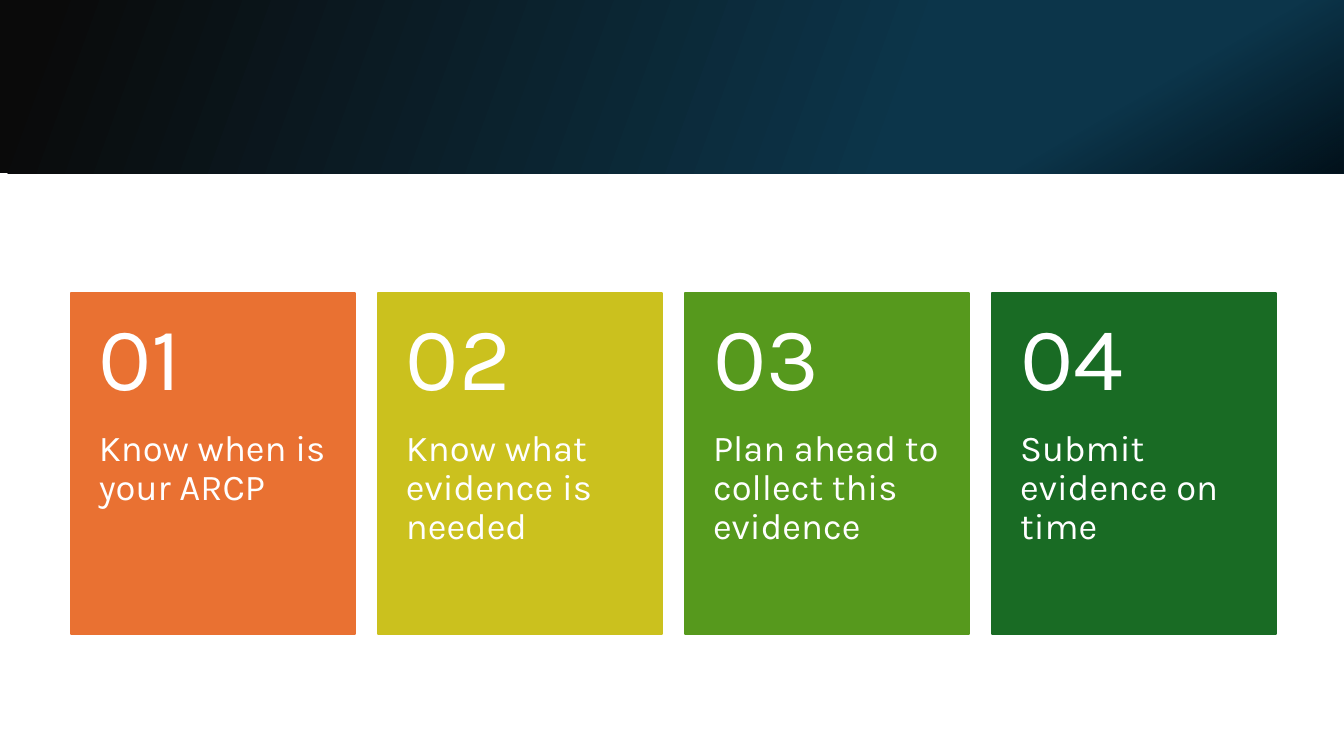
from lxml import etree
from pptx import Presentation, util as u
from pptx.dml.color import RGBColor
from pptx.enum import shapes, text
from pptx.oxml.ns import qn

COLOURS = {
    "night": "0A0A0A",
    "teal": "0C354A",
    "shade": "000B12",
    "white": "FFFFFF",
    "orange": "E97132",
    "lime": "CBC11E",
    "green": "56991D",
    "forest": "196B24",
}
FONT = "Karla"
STEPS = [
    ("orange", "Know when is your ARCP"),
    ("lime", "Know what evidence is needed"),
    ("green", "Plan ahead to collect this evidence"),
    ("forest", "Submit evidence on time"),
]


def colour(name):
    """Return the named colour."""
    return RGBColor.from_string(COLOURS[name])


def add_block(slide, left, top, width, height):
    """Add a plain rectangle without shadow or line."""
    block = slide.shapes.add_shape(
        shapes.MSO_SHAPE.RECTANGLE, u.Cm(left), u.Cm(top), u.Cm(width), u.Cm(height))
    block.shadow.inherit = False
    block.line.fill.background()
    return block


def add_gradient(slide, box, angle, stops):
    """Add a rectangle fading between two stops of colour, position and opacity."""
    block = add_block(slide, *box)
    block.fill.gradient()
    block.fill.gradient_angle = angle
    for stop, (name, position, opacity) in zip(block.fill.gradient_stops, stops):
        stop.color.rgb = colour(name)
        stop.position = position
    tints = block._element.spPr.iter(qn("a:srgbClr"))
    for tint, (_, _, opacity) in zip(tints, stops):
        if opacity < 100:
            etree.SubElement(tint, qn("a:alpha"), val=str(opacity * 1000))


def add_banner(slide, left, top, width, height):
    """Draw the dark banner with a shaded lower right corner."""
    add_gradient(slide, (left, top, width, height), 340,
                 [("night", 0.03, 100), ("teal", 0.68, 100)])
    corner = width / 3
    add_gradient(slide, (left + width - corner, top, corner, height), 300,
                 [("shade", 0.55, 0), ("shade", 1, 85)])


def add_words(slide, box, words, size, insets, anchor):
    """Add a white wrapped text with the given top and bottom insets."""
    frame = slide.shapes.add_textbox(*map(u.Cm, box)).text_frame
    frame.word_wrap = True
    frame.vertical_anchor = anchor
    frame.margin_left = frame.margin_right = u.Cm(0.71)
    frame.margin_top, frame.margin_bottom = map(u.Cm, insets)
    paragraph = frame.paragraphs[0]
    paragraph.text = words
    paragraph.line_spacing = 0.9
    paragraph.font.name = FONT
    paragraph.font.size = u.Pt(size)
    paragraph.font.color.rgb = colour("white")


def add_step(slide, left, top, width, height, number, fill, advice):
    """Draw one card with its number above its advice."""
    card = add_block(slide, left, top, width, height)
    card.fill.solid()
    card.fill.fore_color.rgb = colour(fill)
    card.line.color.rgb = colour(fill)
    card.line.width = u.Pt(1.5)
    head = height * 0.4
    add_words(slide, (left, top + head, width, height - head), advice, 26,
              (0, 0.91), text.MSO_ANCHOR.TOP)
    add_words(slide, (left, top, width, head), f"{number:02d}", 64,
              (0.46, 0.46), text.MSO_ANCHOR.MIDDLE)


def add_steps(slide, left, top, width, height):
    """Lay the cards out in a row with equal gaps."""
    card_width = 7.16
    pitch = (width - card_width) / (len(STEPS) - 1)
    for index, (fill, advice) in enumerate(STEPS):
        add_step(slide, left + index * pitch, top, card_width, height,
                 index + 1, fill, advice)


def main():
    """Build and save the slide."""
    deck = Presentation()
    deck.slide_width, deck.slide_height = u.Cm(33.87), u.Cm(19.05)
    slide = deck.slides.add_slide(deck.slide_layouts[6])
    add_banner(slide, 0, 0, 33.87, 4.37)
    add_steps(slide, 1.78, 7.39, 30.38, 8.59)
    deck.save("out.pptx")


if __name__ == "__main__":
    main()
